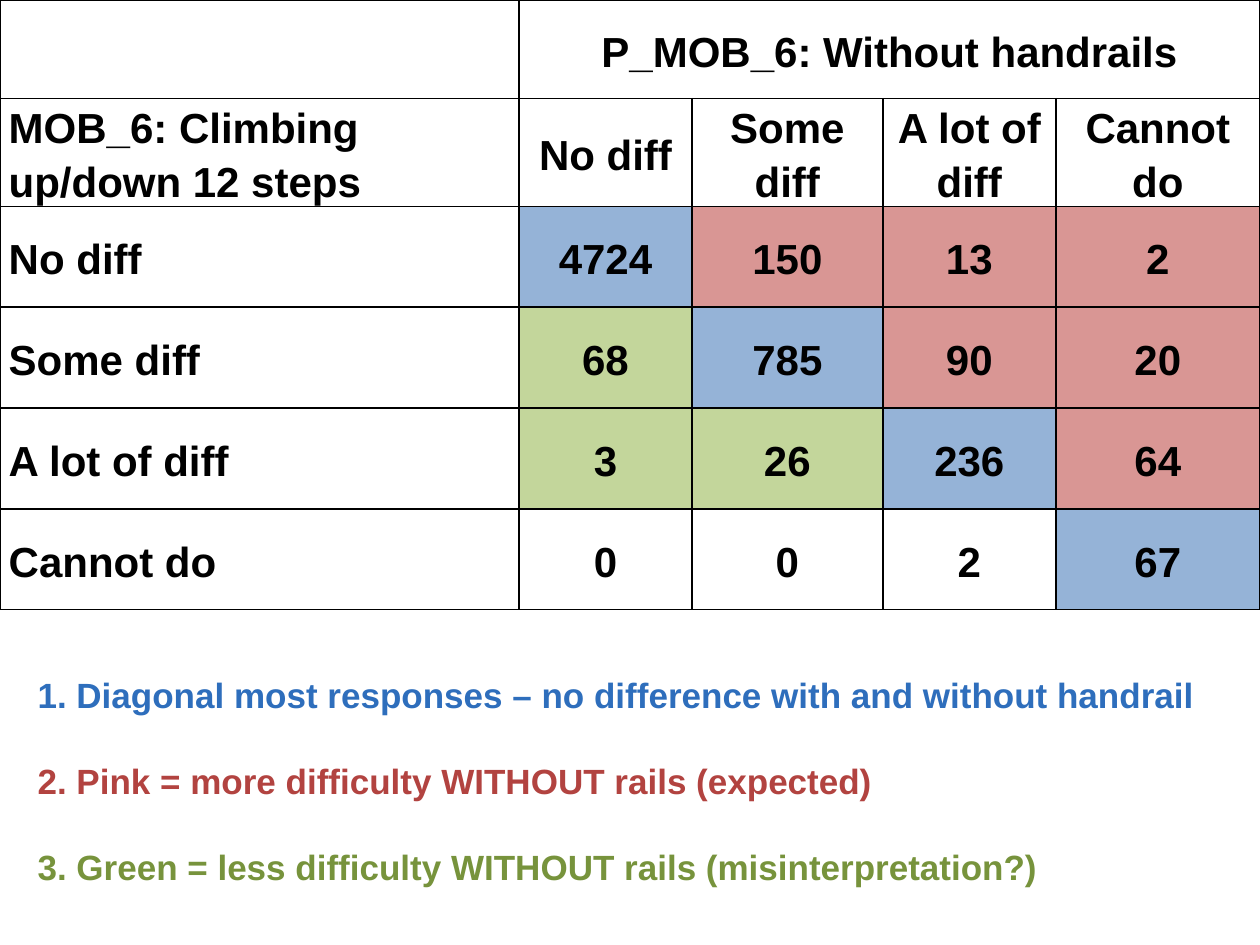
"""Build a slide that cross-tabulates stair climbing difficulty with and without handrails."""
from lxml.etree import SubElement
from pptx import Presentation
from pptx.dml.color import RGBColor
from pptx.enum.text import MSO_ANCHOR as Anchor, PP_ALIGN as Align
from pptx.oxml.ns import qn
from pptx.util import Pt

BLUE, PINK, GREEN = "95B3D7", "D99694", "C3D69B"


def write(paragraph, text, size=24, color="000000", align=Align.LEFT, spacing=1.15, after=0):
    paragraph.alignment = align
    paragraph.line_spacing = spacing
    paragraph.space_after = Pt(after)
    run = paragraph.add_run()
    run.text = text
    run.font.name = "Arial"
    run.font.size = Pt(size)
    run.font.bold = True
    run.font.color.rgb = RGBColor.from_string(color)


def format_cell(cell, fill=None):
    cell.vertical_anchor = Anchor.MIDDLE
    cell.margin_left = cell.margin_right = Pt(5)
    cell.margin_top = cell.margin_bottom = 0
    properties = cell._tc.get_or_add_tcPr()
    for side in ("a:lnL", "a:lnR", "a:lnT", "a:lnB"):
        border = SubElement(properties, qn(side), w=str(Pt(1)))
        SubElement(SubElement(border, qn("a:solidFill")), qn("a:srgbClr"), val="000000")
    if fill:
        cell.fill.solid()
        cell.fill.fore_color.rgb = RGBColor.from_string(fill)
    else:
        cell.fill.background()


prs = Presentation()
prs.slide_width, prs.slide_height = Pt(720), Pt(540)
slide = prs.slides.add_slide(prs.slide_layouts[6])

levels = ["No diff", "Some diff", "A lot of diff", "Cannot do"]
counts = [
    [4724, 150, 13, 2],
    [68, 785, 90, 20],
    [3, 26, 236, 64],
    [0, 0, 2, 67],
]
rows = [
    ["", "P_MOB_6: Without handrails", "", "", ""],
    ["MOB_6: Climbing up/down 12 steps", *levels],
    *[[level, *line] for level, line in zip(levels, counts)],
]
widths = [296.6, 98.8, 109.1, 98.9, 116.6]
heights = [56.4, 51.1] + [57.6] * 4

crosstab = slide.shapes.add_table(6, 5, 0, 0, Pt(720), Pt(sum(heights))).table
crosstab.first_row = crosstab.horz_banding = False
for column, width in zip(crosstab.columns, widths):
    column.width = Pt(width)
for row, height in zip(crosstab.rows, heights):
    row.height = Pt(height)
crosstab.cell(0, 1).merge(crosstab.cell(0, 4))

for r, line in enumerate(rows):
    for c, value in enumerate(line):
        with_rails, without_rails = r - 2, c - 1
        fill = None
        if with_rails >= 0 and without_rails >= 0:
            if with_rails == without_rails:
                fill = BLUE
            elif without_rails > with_rails:
                fill = PINK
            elif with_rails < 3:
                fill = GREEN
        cell = crosstab.cell(r, c)
        format_cell(cell, fill)
        if value != "":
            write(cell.text_frame.paragraphs[0], str(value),
                  align=Align.CENTER if c else Align.LEFT)

findings = [
    ("1. Diagonal most responses – no difference with and without handrail", "2E6EBC"),
    ("2. Pink = more difficulty WITHOUT rails (expected)", "B24340"),
    ("3. Green = less difficulty WITHOUT rails (misinterpretation?)", "77933C"),
]
notes = slide.shapes.add_textbox(Pt(14.4), Pt(378), Pt(705.6), Pt(152.6)).text_frame
notes.word_wrap = True
notes.vertical_anchor = Anchor.TOP
notes.margin_top = Pt(7)
for i, (finding, color) in enumerate(findings):
    paragraph = notes.add_paragraph() if i else notes.paragraphs[0]
    write(paragraph, finding, size=20, color=color, spacing=1.0, after=25)

prs.save("out.pptx")
